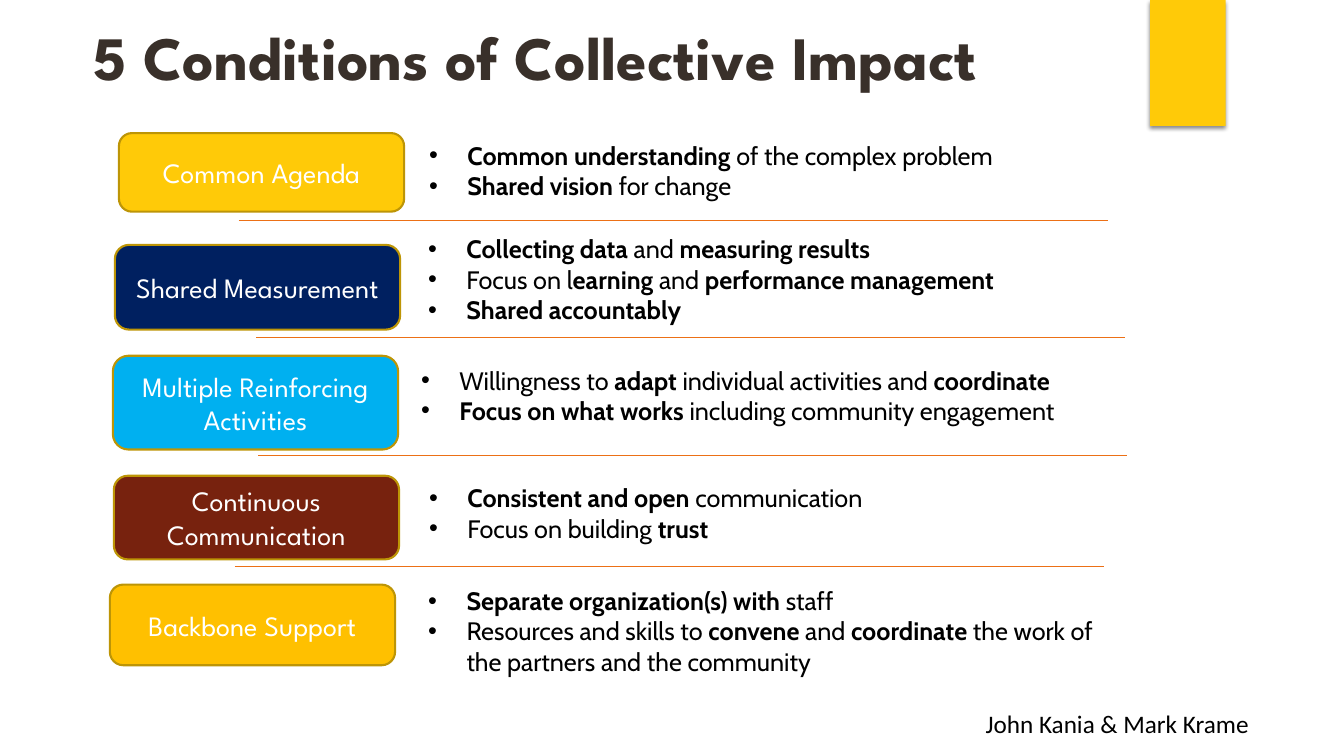
"""Build the slide on the five conditions of collective impact."""
from lxml import etree
from pptx import Presentation
from pptx import util as u
from pptx.dml.color import RGBColor
from pptx.enum import shapes, text
from pptx.oxml import parse_xml
from pptx.oxml.ns import nsdecls, qn

COLS, ROWS = 160, 90
CELL = u.Emu(76200)
HEX = {
    "yellow": "FFCA08", "navy": "002060", "sky": "00B0F0", "brick": "77220E",
    "amber": "FFC000", "border": "BD9506", "rule": "EC7016",
    "title": "39302A", "black": "000000", "white": "FFFFFF",
}
PILL_W, BULLETS_W, RULE_W = 33.96, 90, 103.44
INDENT = u.Inches(0.38)

CONDITIONS = [
    dict(label="Common Agenda", color="yellow",
         pill=(14.16, 15.84, 9.36), notes=(49.92, 16.08, 8.52), rule=(28.44, 26.28),
         points=["*Common understanding *of the complex problem",
                 "*Shared vision *for change"]),
    dict(label="Shared Measurement", color="navy",
         pill=(13.68, 29.16, 10.08), notes=(49.8, 27.24, 12.12), rule=(30.48, 40.2),
         points=["*Collecting data *and *measuring results*",
                 "Focus on l*earning *and *performance management*",
                 "*Shared accountably*"]),
    dict(label="Multiple Reinforcing Activities", color="sky",
         pill=(13.44, 42.36, 11.16), notes=(48.96, 42.84, 12.12), rule=(30.72, 54.24),
         points=["Willingness to *adapt* individual activities and *coordinate*",
                 "*Focus on what works *including community engagement"]),
    dict(label="Continuous Communication", color="brick",
         pill=(13.56, 56.64, 9.96), notes=(49.92, 56.88, 8.52), rule=(27.96, 67.44),
         points=["*Consistent and open *communication",
                 "Focus on building *trust*"]),
    dict(label="Backbone Support", color="amber", notes_w=82.68,
         pill=(13.08, 69.6, 9.6), notes=(49.8, 69.12, 12.12),
         points=["*Separate organization(s) with *staff",
                 "Resources and skills to *convene* and *coordinate* "
                 "the work of the partners and the community"]),
]


def rgb(name):
    """Look up a palette colour."""
    return RGBColor.from_string(HEX[name])


def grid(*cells):
    """Turn grid counts into lengths."""
    return [u.Emu(round(n * CELL)) for n in cells]


def add_bullet(p):
    """Give a paragraph a hanging bullet."""
    pPr = p._p.get_or_add_pPr()
    pPr.set("marL", str(INDENT))
    pPr.set("indent", str(-INDENT))
    etree.SubElement(pPr, qn("a:buFont")).set("typeface", "Arial")
    etree.SubElement(pPr, qn("a:buChar")).set("char", "•")


def write(tf, paragraphs, font="Cabin", size=18, color="black", bold=False,
          align=text.PP_ALIGN.LEFT, anchor=text.MSO_ANCHOR.TOP, bullet=False):
    """Fill a text frame; stars in the text switch bold on and off."""
    tf.word_wrap = True
    tf.auto_size = text.MSO_AUTO_SIZE.NONE
    tf.vertical_anchor = anchor
    for i, line in enumerate(paragraphs):
        p = tf.add_paragraph() if i else tf.paragraphs[0]
        p.alignment = align
        if bullet:
            add_bullet(p)
        for j, part in enumerate(line.split("*")):
            if part:
                r = p.add_run()
                r.text = part
                r.font.name, r.font.size = font, u.Pt(size)
                r.font.color.rgb = rgb(color)
                r.font.bold = bold or j % 2 == 1


def add_title(s, title):
    """Place and format the title placeholder."""
    sp = s.shapes.title
    sp.left, sp.top, sp.width, sp.height = grid(0, 1.44, 127.56, 10.44)
    write(sp.text_frame, [title], font="League Spartan", size=44, color="title",
          bold=True, align=text.PP_ALIGN.CENTER, anchor=text.MSO_ANCHOR.MIDDLE)
    sp.text_frame.paragraphs[0].space_before = u.Pt(0)


def add_block(s, kind, box, fill, border=None):
    """Add a filled shape, bordered if a colour is given."""
    sp = s.shapes.add_shape(kind, *grid(*box))
    sp.shadow.inherit = False
    sp.fill.solid()
    sp.fill.fore_color.rgb = rgb(fill)
    if border:
        sp.line.color.rgb = rgb(border)
        sp.line.width = u.Pt(1.5)
    else:
        sp.line.fill.background()
    return sp


def add_ribbon(s):
    """Add the corner ribbon with its soft shadow."""
    sp = add_block(s, shapes.MSO_SHAPE.RECTANGLE, (136.92, 0, 9, 15), "yellow")
    sp._element.spPr.find(qn("a:effectLst")).append(parse_xml(
        f'<a:outerShdw {nsdecls("a")} blurRad="{u.Pt(3)}" dist="{u.Pt(2)}" '
        f'dir="5400000" rotWithShape="0"><a:srgbClr val="{HEX["black"]}">'
        '<a:alpha val="45000"/></a:srgbClr></a:outerShdw>'))


def add_pill(s, label, left, top, height, color):
    """Add the rounded label of a condition."""
    sp = add_block(s, shapes.MSO_SHAPE.ROUNDED_RECTANGLE,
                   (left, top, PILL_W, height), color, border="border")
    write(sp.text_frame, [label], font="League Spartan", size=20, color="white",
          align=text.PP_ALIGN.CENTER, anchor=text.MSO_ANCHOR.MIDDLE)


def add_text(s, box, paragraphs, **fmt):
    """Add a text box."""
    write(s.shapes.add_textbox(*grid(*box)).text_frame, paragraphs, **fmt)


def add_rule(s, left, top):
    """Add a thin horizontal separator."""
    line = s.shapes.add_connector(shapes.MSO_CONNECTOR.STRAIGHT,
                                  *grid(left, top, left + RULE_W, top))
    line.line.color.rgb = rgb("rule")
    line.line.width = u.Pt(0.75)
    etree.SubElement(line._element.spPr, qn("a:effectLst"))


def main():
    """Assemble and save the slide."""
    prs = Presentation()
    prs.slide_width, prs.slide_height = grid(COLS, ROWS)
    s = prs.slides.add_slide(prs.slide_layouts[5])
    add_ribbon(s)
    add_title(s, "5 Conditions of Collective Impact")
    for c in CONDITIONS:
        add_pill(s, c["label"], *c["pill"], c["color"])
        left, top, height = c["notes"]
        add_text(s, (left, top, c.get("notes_w", BULLETS_W), height),
                 c["points"], bullet=True)
        if "rule" in c:
            add_rule(s, *c["rule"])
    add_text(s, (116.16, 83.76, 36, 4.8), ["John Kania & Mark Krame"], font="Calibri")
    prs.save("out.pptx")


if __name__ == "__main__":
    main()
